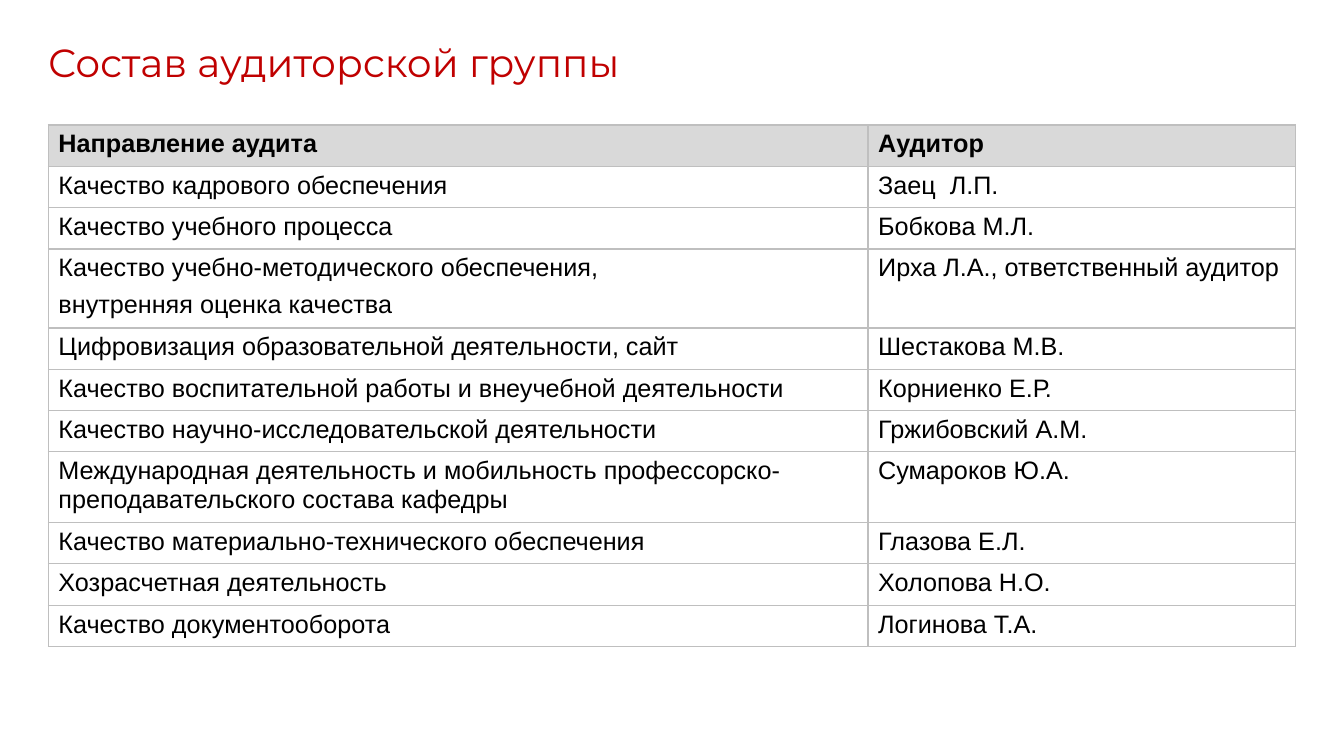
from lxml import etree
from pptx import Presentation
from pptx.dml.color import RGBColor
from pptx.oxml.ns import qn
from pptx.util import Inches, Pt

HEADER = ("Направление аудита", "Аудитор")
AUDITORS = [
    ("Качество кадрового обеспечения", "Заец  Л.П."),
    ("Качество учебного процесса", "Бобкова М.Л."),
    ("Качество учебно-методического обеспечения,\nвнутренняя оценка качества",
     "Ирха Л.А., ответственный аудитор"),
    ("Цифровизация образовательной деятельности, сайт", "Шестакова М.В."),
    ("Качество воспитательной работы и внеучебной деятельности", "Корниенко Е.Р."),
    ("Качество научно-исследовательской деятельности", "Гржибовский А.М."),
    ("Международная деятельность и мобильность "
     "профессорско-преподавательского состава кафедры", "Сумароков Ю.А."),
    ("Качество материально-технического обеспечения", "Глазова Е.Л."),
    ("Хозрасчетная деятельность", "Холопова Н.О."),
    ("Качество документооборота", "Логинова Т.А."),
]


def add_text(paragraph, text, font, size, color, bold=False):
    run = paragraph.add_run()
    run.text = text
    run.font.name = font
    run.font.size = Pt(size)
    run.font.bold = bold
    run.font.color.rgb = RGBColor.from_string(color)


def add_borders(cell, color, width):
    properties = cell._tc.get_or_add_tcPr()
    for side in ("a:lnL", "a:lnR", "a:lnT", "a:lnB"):
        line = etree.SubElement(properties, qn(side), w=str(Pt(width)))
        fill = etree.SubElement(line, qn("a:solidFill"))
        etree.SubElement(fill, qn("a:srgbClr"), val=color)


prs = Presentation()
prs.slide_width, prs.slide_height = Inches(13.33), Inches(7.5)
slide = prs.slides.add_slide(prs.slide_layouts[6])

title = slide.shapes.add_textbox(Inches(0.38), Inches(0.33), Inches(6.52), Inches(0.57))
title.text_frame.word_wrap = False
add_text(title.text_frame.paragraphs[0], "Состав аудиторской группы", "Montserrat", 28, "C00000")

rows = [HEADER] + AUDITORS
row_height = Inches(0.41)
table = slide.shapes.add_table(len(rows), len(HEADER), Inches(0.48), Inches(1.24),
                               Inches(12.37), row_height * len(rows)).table
table.horz_banding = False
for column, width in zip(table.columns, (8.13, 4.24)):
    column.width = Inches(width)

for row_index, row in enumerate(rows):
    table.rows[row_index].height = row_height
    is_header = row_index == 0
    for column_index, text in enumerate(row):
        cell = table.cell(row_index, column_index)
        add_borders(cell, "BFBFBF", 1)
        if is_header:
            cell.fill.solid()
            cell.fill.fore_color.rgb = RGBColor.from_string("D9D9D9")
        else:
            cell.fill.background()
        frame = cell.text_frame
        for line_index, line in enumerate(text.split("\n")):
            paragraph = frame.add_paragraph() if line_index else frame.paragraphs[0]
            paragraph.space_after = Pt(6)
            add_text(paragraph, line, "Arial", 18, "000000", is_header)

prs.save("out.pptx")
